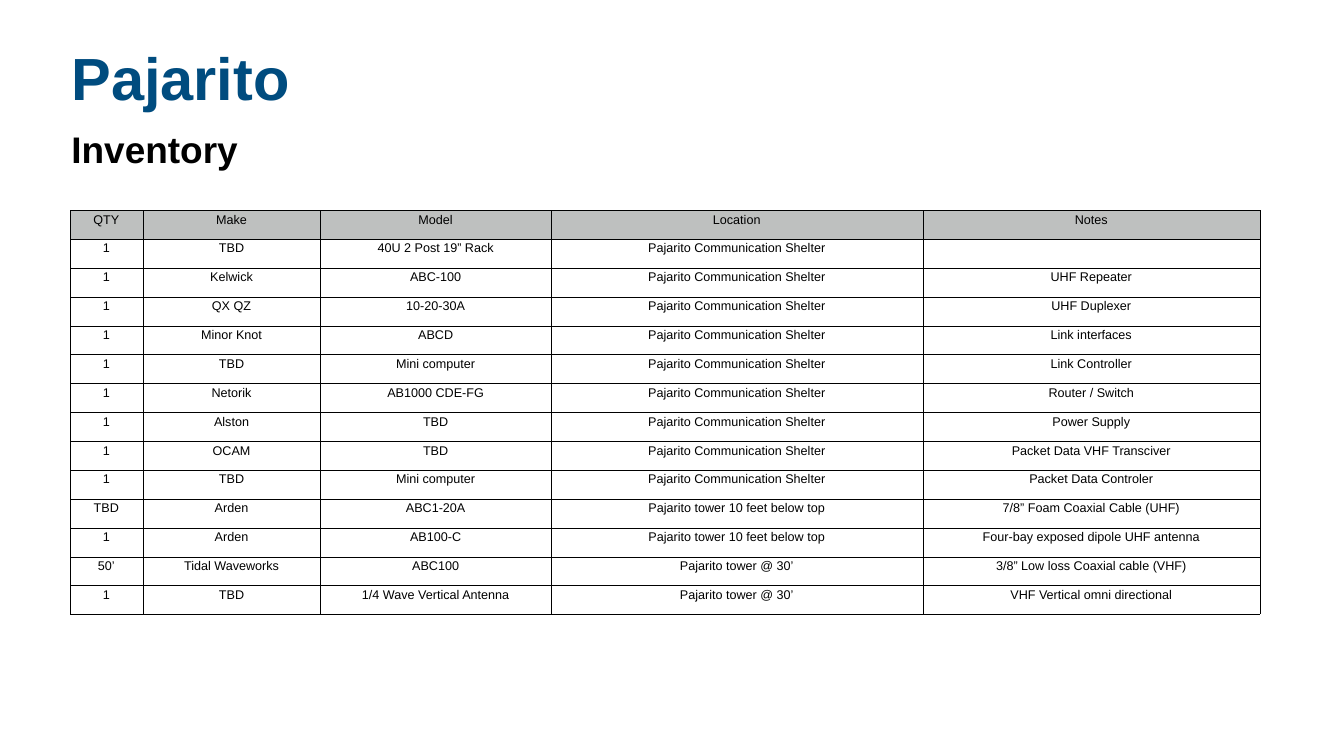
"""Build the Pajarito inventory slide with its equipment table."""
from pptx import Presentation
from pptx.dml.color import RGBColor
from pptx.enum.text import MSO_ANCHOR, MSO_AUTO_SIZE, PP_ALIGN
from pptx.oxml import parse_xml
from pptx.oxml.ns import nsdecls
from pptx.util import Inches, Pt

COLORS = {"title": "004C7F", "text": "000000", "header": "BEC0BF", "border": "000000"}
FONT = "Arial"
SLIDE_WIDTH, SLIDE_HEIGHT = 26.67, 15
HEADING_LEFT, HEADING_WIDTH = 1.32, 24.03
TABLE_LEFT, TABLE_TOP, ROW_HEIGHT = 1.39, 4.17, 0.573
BORDER_WIDTH = 0.06

SHELTER = "Pajarito Communication Shelter"
TOWER_TOP = "Pajarito tower 10 feet below top"
TOWER_30 = "Pajarito tower @ 30’"

COLUMNS = [("QTY", 1.44), ("Make", 3.53), ("Model", 4.57), ("Location", 7.38), ("Notes", 6.69)]
INVENTORY = [
    ("1", "TBD", "40U 2 Post 19” Rack", SHELTER, ""),
    ("1", "Kelwick", "ABC-100", SHELTER, "UHF Repeater"),
    ("1", "QX QZ", "10-20-30A", SHELTER, "UHF Duplexer"),
    ("1", "Minor Knot", "ABCD", SHELTER, "Link interfaces"),
    ("1", "TBD", "Mini computer", SHELTER, "Link Controller"),
    ("1", "Netorik", "AB1000 CDE-FG", SHELTER, "Router / Switch"),
    ("1", "Alston", "TBD", SHELTER, "Power Supply"),
    ("1", "OCAM", "TBD", SHELTER, "Packet Data VHF Transciver"),
    ("1", "TBD", "Mini computer", SHELTER, "Packet Data Controler"),
    ("TBD", "Arden", "ABC1-20A", TOWER_TOP, "7/8” Foam Coaxial Cable (UHF)"),
    ("1", "Arden", "AB100-C", TOWER_TOP, "Four-bay exposed dipole UHF antenna"),
    ("50’", "Tidal Waveworks", "ABC100", TOWER_30, "3/8” Low loss Coaxial cable (VHF)"),
    ("1", "TBD", "1/4 Wave Vertical Antenna", TOWER_30, "VHF Vertical omni directional"),
]


def style(paragraph, size, color, bold=False, align=PP_ALIGN.LEFT):
    paragraph.alignment = align
    font = paragraph.font
    font.name, font.size, font.bold = FONT, Pt(size), bold
    font.color.rgb = RGBColor.from_string(COLORS[color])


def write_heading(heading, text, top, height, size, color, spacing):
    heading.left, heading.top = Inches(HEADING_LEFT), Inches(top)
    heading.width, heading.height = Inches(HEADING_WIDTH), Inches(height)
    frame = heading.text_frame
    frame.text = text
    frame.word_wrap = True
    frame.auto_size = MSO_AUTO_SIZE.NONE
    frame.vertical_anchor = MSO_ANCHOR.TOP
    paragraph = frame.paragraphs[0]
    paragraph.line_spacing = spacing
    style(paragraph, size, color, bold=True)


def add_borders(cell):
    properties = cell._tc.get_or_add_tcPr()
    for position, side in enumerate(("lnL", "lnR", "lnT", "lnB")):
        properties.insert(position, parse_xml(
            f'<a:{side} {nsdecls("a")} w="{Pt(BORDER_WIDTH)}"><a:solidFill>'
            f'<a:srgbClr val="{COLORS["border"]}"/></a:solidFill></a:{side}>'))


def add_inventory(slide):
    names, widths = zip(*COLUMNS)
    rows = [names, *INVENTORY]
    table = slide.shapes.add_table(
        len(rows), len(names), Inches(TABLE_LEFT), Inches(TABLE_TOP),
        Inches(sum(widths)), Inches(ROW_HEIGHT * len(rows))).table
    table.horz_banding = False
    for column, width in zip(table.columns, widths):
        column.width = Inches(width)
    for row_index, row in enumerate(rows):
        table.rows[row_index].height = Inches(ROW_HEIGHT)
        for column_index, entry in enumerate(row):
            cell = table.cell(row_index, column_index)
            cell.text = entry
            style(cell.text_frame.paragraphs[0], 18, "text", align=PP_ALIGN.CENTER)
            if row_index == 0:
                cell.fill.solid()
                cell.fill.fore_color.rgb = RGBColor.from_string(COLORS["header"])
            else:
                cell.fill.background()
            add_borders(cell)


def main():
    deck = Presentation()
    deck.slide_width, deck.slide_height = Inches(SLIDE_WIDTH), Inches(SLIDE_HEIGHT)
    slide = deck.slides.add_slide(deck.slide_layouts[5])
    write_heading(slide.shapes.title, "Pajarito", 1.04, 1.57, 85, "title", 0.8)
    subtitle = slide.shapes.add_textbox(0, 0, 0, 0)
    write_heading(subtitle, "Inventory", 2.46, 1.02, 52.8, "text", 1.0)
    add_inventory(slide)
    deck.save("out.pptx")


if __name__ == "__main__":
    main()
